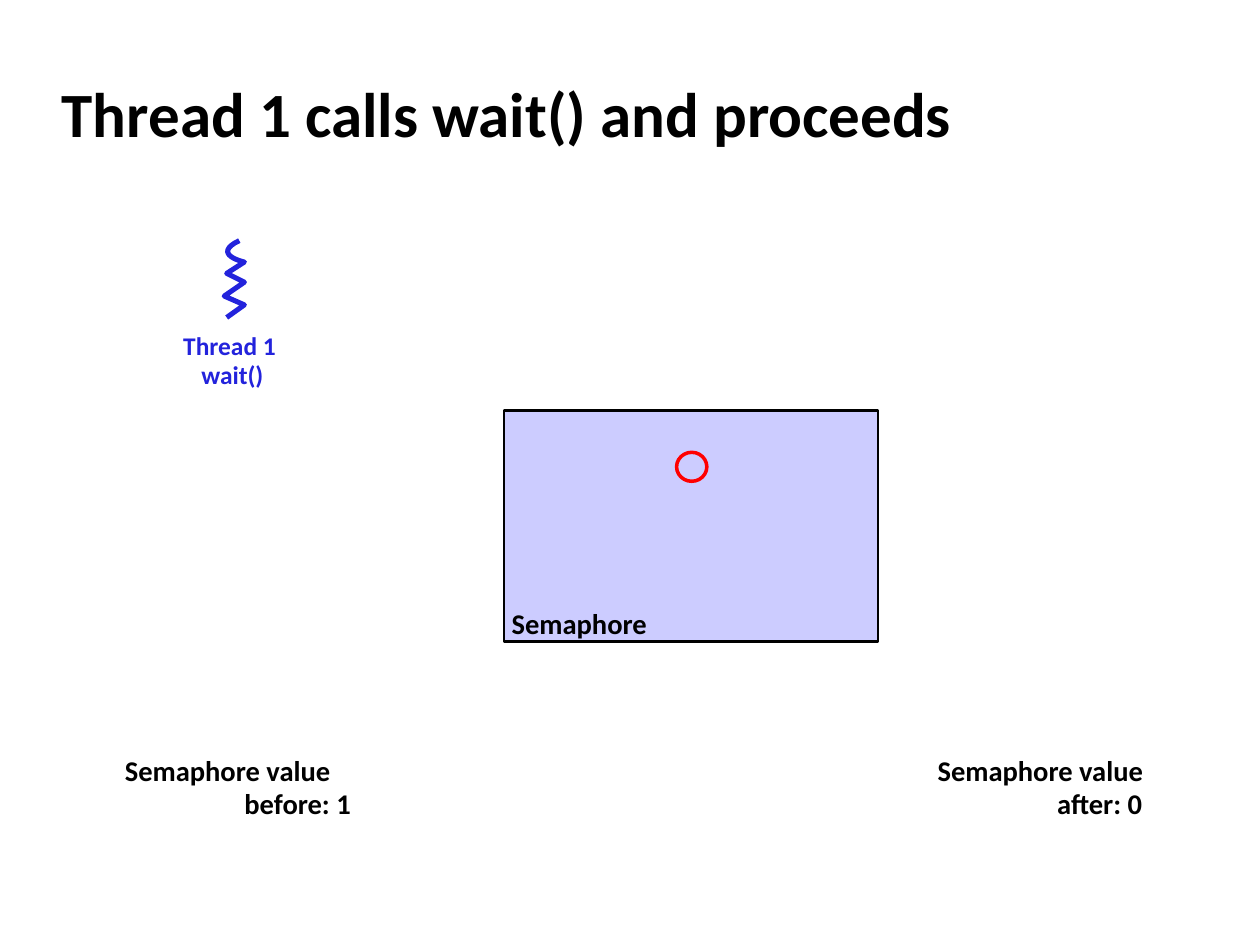
from pptx import Presentation
from pptx.dml.color import RGBColor
from pptx.enum import shapes, text
from pptx.oxml import parse_xml
from pptx.oxml.ns import nsdecls
from pptx.util import Inches, Pt

# Content
TITLE = "Thread 1 calls wait() and proceeds"
BLACK, BLUE, RED, LILAC = "000000", "2323DC", "FF0000", "CCCCFF"
THREAD_LABEL = (["Thread 1 ", "wait()"], (1.36, 2.64, 0.97, 0.47))
SEMAPHORE_LABELS = [
    ([" Semaphore"], (4.01, 4.83, 2.97, 0.26)),
    ([" Semaphore value", "\t\tbefore: 1"], (0.94, 6, 2.97, 0.26)),
    ([" Semaphore value", "\t\tafter: 0"], (7.39, 6, 2.97, 0.26)),
]
SEMAPHORE_BOX = (4, 3.26, 2.97, 1.83)
TOKEN_BOX = (5.37, 3.59, 0.24, 0.23)
# The thread starts with a curved hook, then zigzags
HOOK = [(1.9, 1.91), (1.67, 2.02), (1.94, 2.08), (1.94, 2.08)]
ZIGZAG = [(1.8, 2.17), (1.94, 2.24), (1.78, 2.35), (1.94, 2.42), (1.8, 2.52)]
TAB_STEP = 0.5
HOOK_STEPS = 16


def color(value):
    return RGBColor.from_string(value)


def place(box):
    return [Inches(value) for value in box]


def style_shape(shape, line, width, fill=None):
    shape.shadow.inherit = False
    if fill:
        shape.fill.solid()
        shape.fill.fore_color.rgb = color(fill)
    else:
        shape.fill.background()
    shape.line.color.rgb = color(line)
    shape.line.width = Pt(width)


def style_runs(paragraph, size, value):
    for run in paragraph.runs:
        font = run.font
        font.name, font.size, font.bold = "Calibri", Pt(size), True
        font.color.rgb = color(value)


def add_label(slide, lines, box, size, value, align=text.PP_ALIGN.LEFT, wrap=True):
    frame = slide.shapes.add_textbox(*place(box)).text_frame
    frame.margin_left = frame.margin_right = frame.margin_top = frame.margin_bottom = 0
    frame.word_wrap = wrap
    frame.text = "\n".join(lines)
    for paragraph in frame.paragraphs:
        paragraph.alignment = align
        paragraph.line_spacing = 0.95
        style_runs(paragraph, size, value)
        if "\t" in paragraph.text:
            stops = "".join(f'<a:tab pos="{Inches(TAB_STEP * n)}" algn="l"/>' for n in (1, 2))
            paragraph._p.get_or_add_pPr().append(
                parse_xml(f'<a:tabLst {nsdecls("a")}>{stops}</a:tabLst>'))


def bezier(points, t):
    weights = ((1 - t) ** 3, 3 * t * (1 - t) ** 2, 3 * t * t * (1 - t), t ** 3)
    return tuple(sum(w * p[axis] for w, p in zip(weights, points)) for axis in (0, 1))


presentation = Presentation()
presentation.slide_width, presentation.slide_height = Inches(10), Inches(7.5)
slide = presentation.slides.add_slide(presentation.slide_layouts[5])

# Title
title = slide.shapes.title
title.left, title.top, title.width, title.height = place((0.39, 0.48, 8.3, 0.83))
title.text_frame.text = TITLE
title.text_frame.vertical_anchor = text.MSO_ANCHOR.MIDDLE
title.text_frame.paragraphs[0].alignment = text.PP_ALIGN.LEFT
style_runs(title.text_frame.paragraphs[0], 36, BLACK)

# Semaphore
semaphore = slide.shapes.add_shape(shapes.MSO_SHAPE.ROUNDED_RECTANGLE, *place(SEMAPHORE_BOX))
semaphore.adjustments[0] = 0
style_shape(semaphore, BLACK, 1.45, LILAC)

# Thread
hook = [bezier(HOOK, step / HOOK_STEPS) for step in range(HOOK_STEPS + 1)]
start, *points = [place(point) for point in hook + ZIGZAG]
builder = slide.shapes.build_freeform(*start)
builder.add_line_segments(points, close=False)
style_shape(builder.convert_to_shape(), BLUE, 2.89)
add_label(slide, *THREAD_LABEL, 14.5, BLUE, text.PP_ALIGN.CENTER, wrap=False)

# Token and semaphore labels
token = slide.shapes.add_shape(shapes.MSO_SHAPE.OVAL, *place(TOKEN_BOX))
style_shape(token, RED, 2)
for lines, box in SEMAPHORE_LABELS:
    add_label(slide, lines, box, 16.3, BLACK)

presentation.save("out.pptx")
